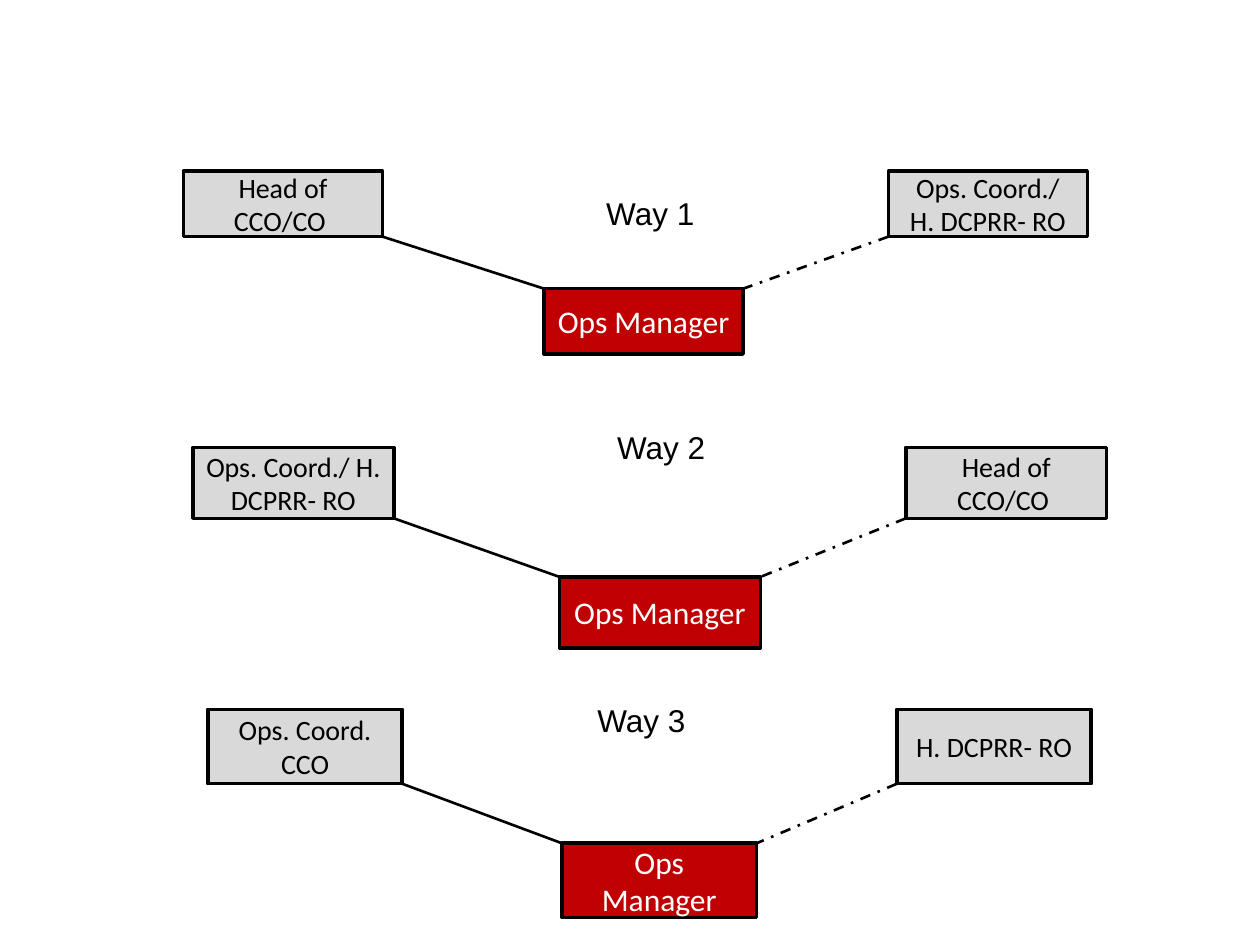
"""Build a slide showing three reporting lines for the Ops Manager."""
from lxml import etree
from pptx import Presentation
from pptx.dml.color import RGBColor
from pptx.enum.dml import MSO_LINE
from pptx.enum.shapes import MSO_CONNECTOR, MSO_SHAPE
from pptx.enum.text import MSO_ANCHOR, MSO_AUTO_SIZE, PP_ALIGN
from pptx.oxml.ns import qn
from pptx.util import Cm, Pt

RECTANGLE = MSO_SHAPE.RECTANGLE
STRAIGHT = MSO_CONNECTOR.STRAIGHT
DASH_DOT = MSO_LINE.DASH_DOT
MIDDLE = MSO_ANCHOR.MIDDLE
FIT_SHAPE = MSO_AUTO_SIZE.SHAPE_TO_FIT_TEXT
CENTER = PP_ALIGN.CENTER

BLACK = RGBColor(0x00, 0x00, 0x00)
WHITE = RGBColor(0xFF, 0xFF, 0xFF)
RED = RGBColor(0xC0, 0x00, 0x00)
GRAY = RGBColor(0xD9, 0xD9, 0xD9)

MANAGER = "Ops Manager"
LABEL_SIZE = (6.4, 1.02)
WAYS = [
    {"label": "Way 1", "label_at": (9.91, 3.78), "box": (4.01, 1.32),
     "solid": ("Head of CCO/CO ", 3.7), "dashed": ("Ops. Coord./ H. DCPRR- RO", 17.91),
     "manager_left": 10.97, "tops": (3.45, 5.82)},
    {"label": "Way 2", "label_at": (10.13, 8.51), "box": (4.05, 1.43),
     "solid": ("Ops. Coord./ H. DCPRR- RO", 3.89), "dashed": ("Head of CCO/CO ", 18.26),
     "manager_left": 11.28, "tops": (9.02, 11.63)},
    {"label": "Way 3", "label_at": (9.73, 14), "box": (3.92, 1.5),
     "solid": ("Ops. Coord. CCO", 4.19), "dashed": ("H. DCPRR- RO", 18.08),
     "manager_left": 11.33, "tops": (14.3, 17)},
]


def write_text(shape, text, *, size, font="Calibri", color=BLACK):
    frame = shape.text_frame
    frame.word_wrap = True
    paragraph = frame.paragraphs[0]
    paragraph.alignment = CENTER
    run = paragraph.add_run()
    run.text = text
    run.font.size = Pt(size)
    run.font.name = font
    run.font.color.rgb = color


def add_box(shapes, text, left, top, box, *, fill=GRAY, size=16, color=BLACK):
    shape = shapes.add_shape(RECTANGLE, Cm(left), Cm(top), *map(Cm, box))
    shape.shadow.inherit = False
    shape.fill.solid()
    shape.fill.fore_color.rgb = fill
    shape.line.color.rgb = BLACK
    shape.line.width = Pt(2)
    shape.text_frame.vertical_anchor = MIDDLE
    write_text(shape, text, size=size, color=color)


def add_link(shapes, start, end, dash=None):
    connector = shapes.add_connector(STRAIGHT, *map(Cm, start + end))
    connector.line.color.rgb = BLACK
    connector.line.width = Pt(1.5)
    if dash:
        connector.line.dash_style = dash
    etree.SubElement(connector._element.spPr, qn("a:effectLst"))


def add_way(slide, way):
    box = width, height = way["box"]
    top, manager_top = way["tops"]
    manager_left = way["manager_left"]
    solid_text, solid_left = way["solid"]
    dashed_text, dashed_left = way["dashed"]
    bottom = top + height

    shapes = slide.shapes.add_group_shape().shapes
    add_box(shapes, MANAGER, manager_left, manager_top, box, fill=RED, size=18, color=WHITE)
    add_box(shapes, solid_text, solid_left, top, box)
    add_box(shapes, dashed_text, dashed_left, top, box)
    add_link(shapes, (solid_left + width, bottom), (manager_left, manager_top))
    add_link(shapes, (dashed_left, bottom), (manager_left + width, manager_top), DASH_DOT)

    label = slide.shapes.add_textbox(*map(Cm, way["label_at"] + LABEL_SIZE))
    label.text_frame.auto_size = FIT_SHAPE
    write_text(label, way["label"], size=18, font="Arial")


def main():
    presentation = Presentation()
    presentation.slide_width = Cm(25.4)
    presentation.slide_height = Cm(19.05)
    slide = presentation.slides.add_slide(presentation.slide_layouts[6])
    for way in WAYS:
        add_way(slide, way)
    presentation.save("out.pptx")


if __name__ == "__main__":
    main()
